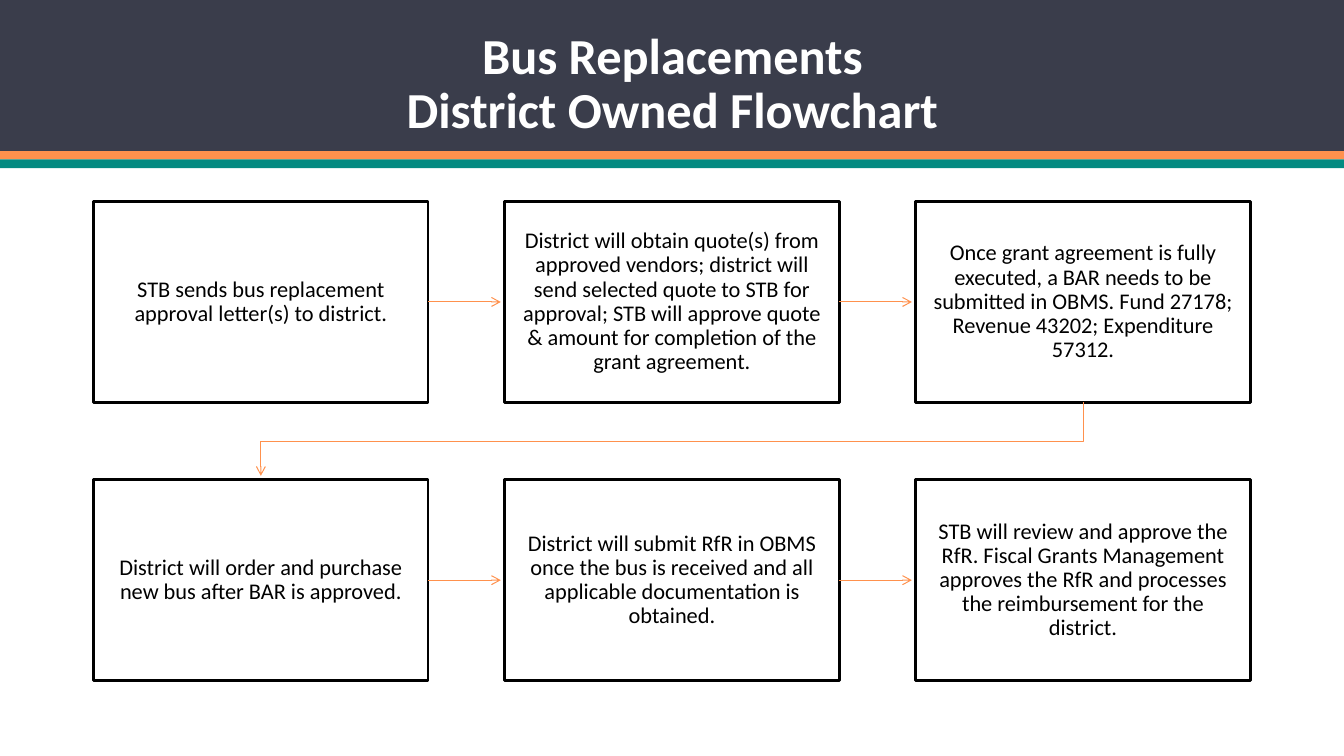
"""Build the bus replacement flowchart slide."""
from lxml import etree
from pptx import Presentation
from pptx.dml.color import RGBColor
from pptx.enum import shapes, text
from pptx.oxml import ns
from pptx.util import Cm, Pt

TITLE = "Bus Replacements\vDistrict Owned Flowchart"
STEPS = [
    "STB sends bus replacement approval letter(s) to district.",
    "District will obtain quote(s) from approved vendors; district will send selected quote "
    "to STB for approval; STB will approve quote & amount for completion of the grant agreement.",
    "Once grant agreement is fully executed, a BAR needs to be submitted in OBMS. "
    "Fund 27178; Revenue 43202; Expenditure 57312.",
    "District will order and purchase new bus after BAR is approved.",
    "District will submit RfR in OBMS once the bus is received and all applicable "
    "documentation is obtained.",
    "STB will review and approve the RfR. Fiscal Grants Management approves the RfR and "
    "processes the reimbursement for the district.",
]
NAVY = RGBColor(0x3A, 0x3D, 0x4B)
ORANGE = RGBColor(0xFF, 0x91, 0x4D)
TEAL = RGBColor(0x04, 0x8A, 0x81)
WHITE = RGBColor(0xFF, 0xFF, 0xFF)
BLACK = RGBColor(0, 0, 0)
BANDS = [(0, 3.81, NAVY), (3.81, 0.21, ORANGE), (4.02, 0.22, TEAL)]
TITLE_FONT = {"name": "Calibri", "size": Pt(36), "bold": True}
STEP_FONT = {"name": "Calibri", "size": Pt(16), "bold": False}

COLS = 3
SLIDE_W, SLIDE_H = Cm(33.87), Cm(19.05)
LEFT, TOP = Cm(2.36), Cm(5.08)
BOX_W, BOX_H = Cm(8.43), Cm(5.06)
PITCH_X, PITCH_Y = Cm(10.36), Cm(7.01)
ARROW_GAP = Cm(0.1)


def write(sp, words, font, color, inset_x, inset_y):
    tf = sp.text_frame
    frame = {"word_wrap": True, "vertical_anchor": text.MSO_ANCHOR.MIDDLE,
             "margin_left": inset_x, "margin_right": inset_x,
             "margin_top": inset_y, "margin_bottom": inset_y}
    for name, value in frame.items():
        setattr(tf, name, value)
    p = tf.paragraphs[0]
    p.text = words
    p.alignment = text.PP_ALIGN.CENTER
    p.line_spacing = 0.9
    for r in p.runs:
        for name, value in font.items():
            setattr(r.font, name, value)
        r.font.color.rgb = color


def add_rect(s, x, y, w, h):
    sp = s.shapes.add_shape(shapes.MSO_SHAPE.RECTANGLE, x, y, w, h)
    sp.shadow.inherit = False
    return sp


def style_arrow(sp):
    sp.line.color.rgb = ORANGE
    sp.line.width = Pt(0.75)
    ln = sp.line._get_or_add_ln()
    etree.SubElement(ln, ns.qn("a:tailEnd"), type="arrow")


def add_arrow(s, start, end):
    y = start.top + start.height // 2
    sp = s.shapes.add_connector(shapes.MSO_CONNECTOR.STRAIGHT, start.left + start.width, y,
                                end.left - ARROW_GAP, y)
    sp.begin_connect(start, 3)
    style_arrow(sp)
    etree.SubElement(sp._element.spPr, ns.qn("a:effectLst"))


def add_return_arrow(s, start, end):
    x1, x2 = (box.left + box.width // 2 for box in (start, end))
    y1, y2 = start.top + start.height, end.top
    middle = (y1 + y2) // 2
    fb = s.shapes.build_freeform(x1, y1)
    fb.add_line_segments([(x1, middle), (x2, middle), (x2, y2 - ARROW_GAP)], close=False)
    sp = fb.convert_to_shape()
    sp.shadow.inherit = False
    sp.fill.background()
    style_arrow(sp)


def main():
    prs = Presentation()
    prs.slide_width, prs.slide_height = SLIDE_W, SLIDE_H
    s = prs.slides.add_slide(prs.slide_layouts[6])
    for y, h, color in BANDS:
        sp = add_rect(s, 0, Cm(y), SLIDE_W, Cm(h))
        sp.fill.solid()
        sp.fill.fore_color.rgb = color
        sp.line.fill.background()
    title = s.shapes.add_textbox(Cm(0.48), Cm(0.71), Cm(32.94), Cm(2.87))
    write(title, TITLE, TITLE_FONT, WHITE, Cm(0.25), Cm(0.13))

    boxes = []
    for i, words in enumerate(STEPS):
        row, col = divmod(i, COLS)
        sp = add_rect(s, LEFT + col * PITCH_X, TOP + row * PITCH_Y, BOX_W, BOX_H)
        sp.fill.background()
        sp.line.color.rgb = BLACK
        sp.line.width = Pt(2)
        write(sp, words, STEP_FONT, BLACK, Cm(0.41), Cm(0.43))
        boxes.append(sp)
    for start, end in zip(boxes, boxes[1:]):
        connect = add_arrow if start.top == end.top else add_return_arrow
        connect(s, start, end)
    prs.save("out.pptx")


if __name__ == "__main__":
    main()
